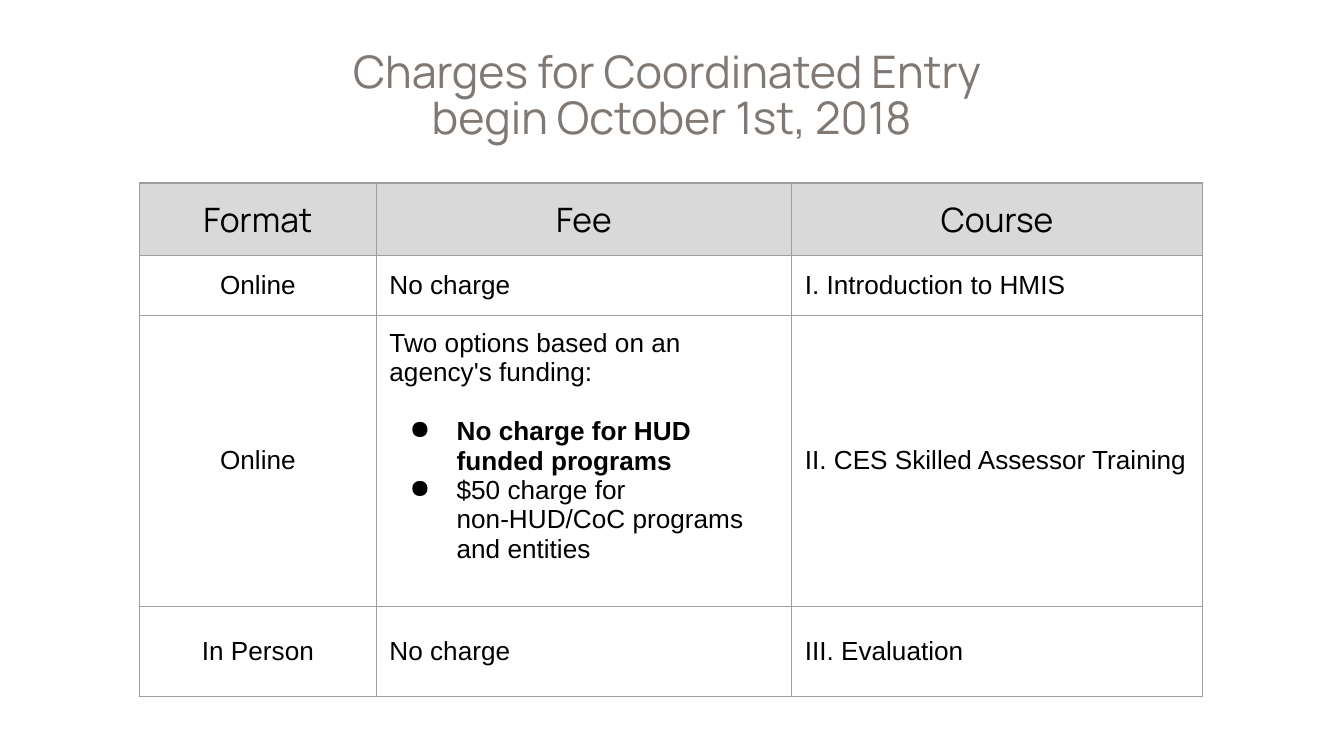
"""Build a slide with the table of course charges."""
import lxml.etree
import pptx
import pptx.dml.color
import pptx.enum.text
import pptx.oxml.ns
import pptx.util

Cm = pptx.util.Cm
Pt = pptx.util.Pt
RGB = pptx.dml.color.RGBColor
ALIGN = pptx.enum.text.PP_ALIGN
ANCHOR = pptx.enum.text.MSO_ANCHOR

TAUPE = RGB(0x80, 0x78, 0x73)
BLACK = RGB(0, 0, 0)
GREY = RGB(0xD9, 0xD9, 0xD9)
LINE = RGB(0x9E, 0x9E, 0x9E)

PAD = Cm(0.25)
COLS = [4.47, 7.85, 7.77]
ROWS = [1.37, 1.13, 5.5, 1.7]
LEAD = "Two options based on an agency's funding:"
FREE = "No charge for HUD funded programs"
PAID = "$50 charge for non-HUD/CoC programs and entities"
CELLS = [
    ["Format", "Fee", "Course"],
    ["Online", "No charge", "I. Introduction to HMIS"],
    ["Online", "\n".join([LEAD, FREE, PAID]), "II. CES Skilled Assessor Training"],
    ["In Person", "No charge", "III. Evaluation"],
]


def add_node(base, tag, **attrs):
    return lxml.etree.SubElement(base, pptx.oxml.ns.qn(tag), attrs)


def style(para, face, size, color, align):
    para.alignment = align
    for run in para.runs:
        run.font.name = face
        run.font.size = Pt(size)
        run.font.color.rgb = color


def add_title(slide):
    box = slide.shapes.add_textbox(Cm(0.86), Cm(0.61), Cm(23.67), Cm(1.6))
    frame = box.text_frame
    frame.word_wrap = True
    frame.margin_left = frame.margin_right = frame.margin_bottom = PAD
    frame.margin_top = Cm(0.35)
    frame.text = "Charges for Coordinated Entry \vbegin October 1st, 2018"
    para = frame.paragraphs[0]
    para.line_spacing = 0.87
    style(para, "Manrope", 24, TAUPE, ALIGN.CENTER)


def add_edges(cell):
    props = cell._tc.get_or_add_tcPr()
    for side in "LRTB":
        edge = add_node(props, f"a:ln{side}", w=str(Pt(0.75)))
        fill = add_node(edge, "a:solidFill")
        add_node(fill, "a:srgbClr", val=str(LINE))


def add_bullet(para):
    props = para._p.get_or_add_pPr()
    props.set("marL", str(Cm(1.27)))
    props.set("indent", str(-Cm(0.89)))
    tint = add_node(props, "a:buClr")
    add_node(tint, "a:srgbClr", val=str(BLACK))
    add_node(props, "a:buChar", char="●")


def fill_cell(cell, text, head, align):
    cell.margin_left = cell.margin_right = PAD
    cell.margin_top = cell.margin_bottom = PAD
    cell.vertical_anchor = ANCHOR.MIDDLE
    add_edges(cell)
    if head:
        cell.fill.solid()
        cell.fill.fore_color.rgb = GREY
    else:
        cell.fill.background()
    cell.text_frame.text = text
    face, size = ("Manrope", 18) if head else ("Arial", 14)
    for para in cell.text_frame.paragraphs:
        style(para, face, size, BLACK, align)


def list_fees(cell):
    cell.vertical_anchor = ANCHOR.TOP
    items = cell.text_frame.paragraphs[1:]
    for para in items:
        add_bullet(para)
    items[0].space_before = Pt(16)
    items[0].runs[0].font.bold = True


def add_table(slide):
    shape = slide.shapes.add_table(
        len(ROWS), len(COLS), Cm(2.64), Cm(3.46), Cm(sum(COLS)), Cm(sum(ROWS)))
    table = shape.table
    table.first_row = table.horz_banding = False
    for col, width in zip(table.columns, COLS):
        col.width = Cm(width)
    for row, height in zip(table.rows, ROWS):
        row.height = Cm(height)
    for r, texts in enumerate(CELLS):
        for c, text in enumerate(texts):
            align = ALIGN.CENTER if r == 0 or c == 0 else ALIGN.LEFT
            fill_cell(table.cell(r, c), text, r == 0, align)
    list_fees(table.cell(2, 1))


def main():
    deck = pptx.Presentation()
    deck.slide_width = Cm(25.4)
    deck.slide_height = Cm(14.29)
    slide = deck.slides.add_slide(deck.slide_layouts[6])
    add_title(slide)
    add_table(slide)
    deck.save("out.pptx")


if __name__ == "__main__":
    main()
